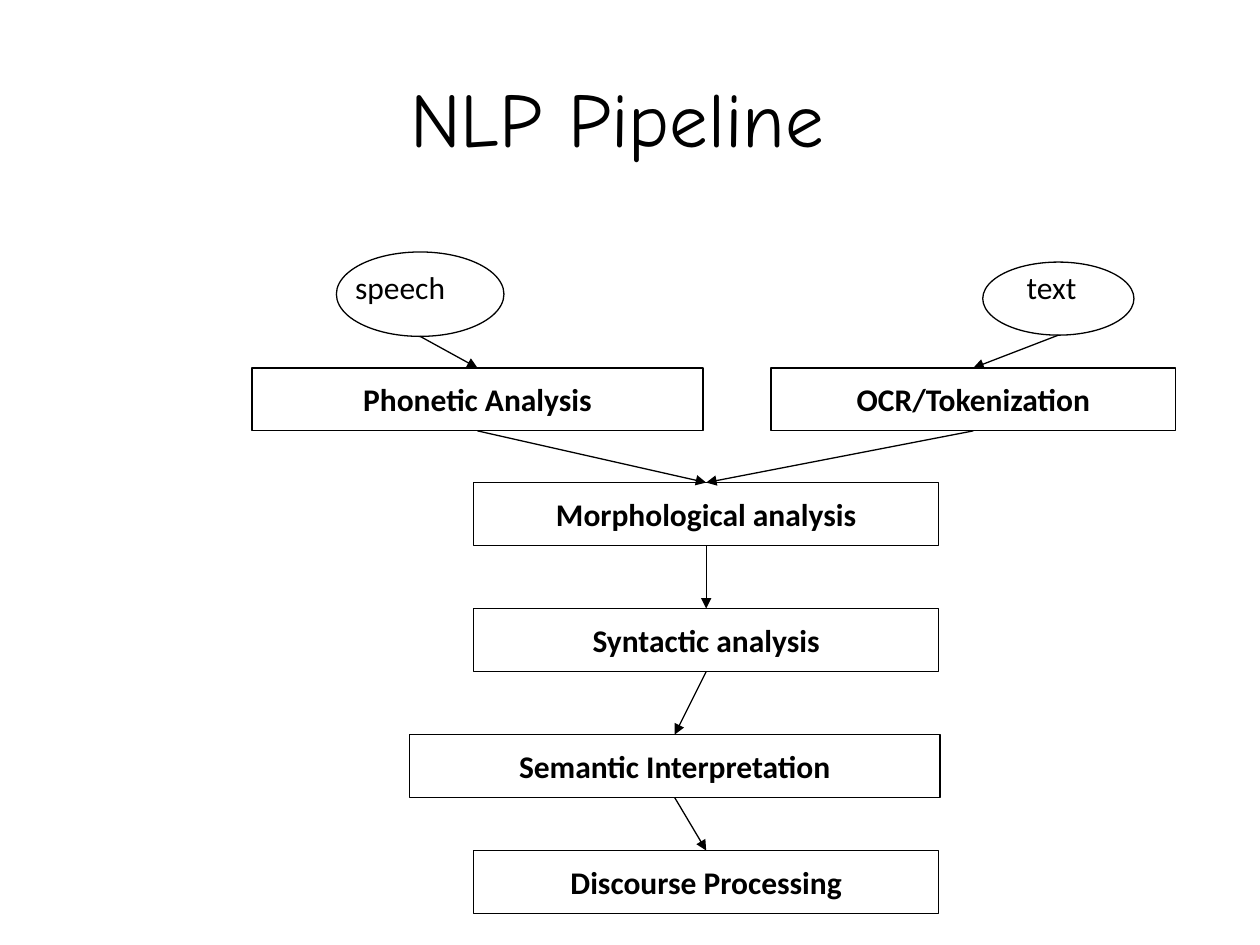
"""Build the NLP Pipeline flow slide."""
from pptx import Presentation
from pptx.dml.color import RGBColor
from pptx.enum.shapes import MSO_CONNECTOR as Connector, MSO_SHAPE as Shape
from pptx.enum.text import MSO_ANCHOR as Anchor, PP_ALIGN as Align
from pptx.oxml.ns import qn
from pptx.util import Inches, Pt
from lxml.etree import SubElement

TITLE = "NLP Pipeline "
COLOURS = {"ink": "000000", "paper": "FFFFFF"}
TITLE_FONT = {"name": "Comic Neue", "size": Pt(44), "bold": False}
STAGE_FONT = {"name": "Calibri", "size": Pt(18), "bold": True}
INPUT_FONT = {**STAGE_FONT, "bold": False}
STAGE_HEIGHT = 0.5
MAIN = (3.76, 3.69)
STAGES = {
    "Phonetic Analysis": (2, 2.92, 3.58),
    "OCR/Tokenization": (6.12, 2.92, 3.21),
    "Morphological analysis": (MAIN[0], 3.83, MAIN[1]),
    "Syntactic analysis": (MAIN[0], 4.83, MAIN[1]),
    "Semantic Interpretation": (3.25, 5.83, 4.21),
    "Discourse Processing": (MAIN[0], 6.75, MAIN[1]),
}
INPUTS = {
    "speech": ((2.67, 2, 1.33, 0.67), (2.72, 2.08, 1.37, 0.5)),
    "text": ((7.8, 2.08, 1.2, 0.58), (8.05, 2.08, 1.28, 0.5)),
}
FLOWS = [
    ("speech", "Phonetic Analysis"),
    ("text", "OCR/Tokenization"),
    ("Phonetic Analysis", "Morphological analysis"),
    ("OCR/Tokenization", "Morphological analysis"),
    ("Morphological analysis", "Syntactic analysis"),
    ("Syntactic analysis", "Semantic Interpretation"),
    ("Semantic Interpretation", "Discourse Processing"),
]


def colour(name):
    return RGBColor.from_string(COLOURS[name])


def write(frame, words, font, align):
    para = frame.paragraphs[0]
    para.alignment = align
    span = para.add_run()
    span.text = words
    for key, value in font.items():
        setattr(span.font, key, value)
    span.font.color.rgb = colour("ink")


def draw_line(line):
    line.color.rgb = colour("ink")
    line.width = Pt(0.75)


def add_outline(page, kind, place):
    shape = page.shapes.add_shape(kind, *map(Inches, place))
    shape.shadow.inherit = False
    draw_line(shape.line)
    return shape


def add_stage(page, words, place):
    box = add_outline(page, Shape.RECTANGLE, place)
    box.fill.solid()
    box.fill.fore_color.rgb = colour("paper")
    frame = box.text_frame
    frame.word_wrap = False
    frame.vertical_anchor = Anchor.MIDDLE
    write(frame, words, STAGE_FONT, Align.CENTER)
    return box


def add_input(page, words, oval_place, label_place):
    oval = add_outline(page, Shape.OVAL, oval_place)
    oval.fill.background()
    label = page.shapes.add_textbox(*map(Inches, label_place))
    label.text_frame.word_wrap = True
    write(label.text_frame, words, INPUT_FONT, Align.LEFT)
    return oval


def add_arrow(page, source, target):
    arrow = page.shapes.add_connector(
        Connector.STRAIGHT,
        source.left + source.width // 2, source.top + source.height,
        target.left + target.width // 2, target.top)
    draw_line(arrow.line)
    SubElement(arrow.line._get_or_add_ln(), qn("a:tailEnd"), type="triangle")
    SubElement(arrow._element.spPr, qn("a:effectLst"))


def main():
    deck = Presentation()
    deck.slide_width, deck.slide_height = Inches(10), Inches(7.5)
    page = deck.slides.add_slide(deck.slide_layouts[5])
    title = page.shapes.title
    title.left, title.top, title.width, title.height = map(Inches, (0.5, 0.3, 9, 1.25))
    title.text_frame.vertical_anchor = Anchor.MIDDLE
    write(title.text_frame, TITLE, TITLE_FONT, Align.CENTER)

    nodes = {words: add_stage(page, words, (*place[:2], place[2], STAGE_HEIGHT))
             for words, place in STAGES.items()}
    for words, places in INPUTS.items():
        nodes[words] = add_input(page, words, *places)
    for source, target in FLOWS:
        add_arrow(page, nodes[source], nodes[target])
    deck.save("out.pptx")


if __name__ == "__main__":
    main()
